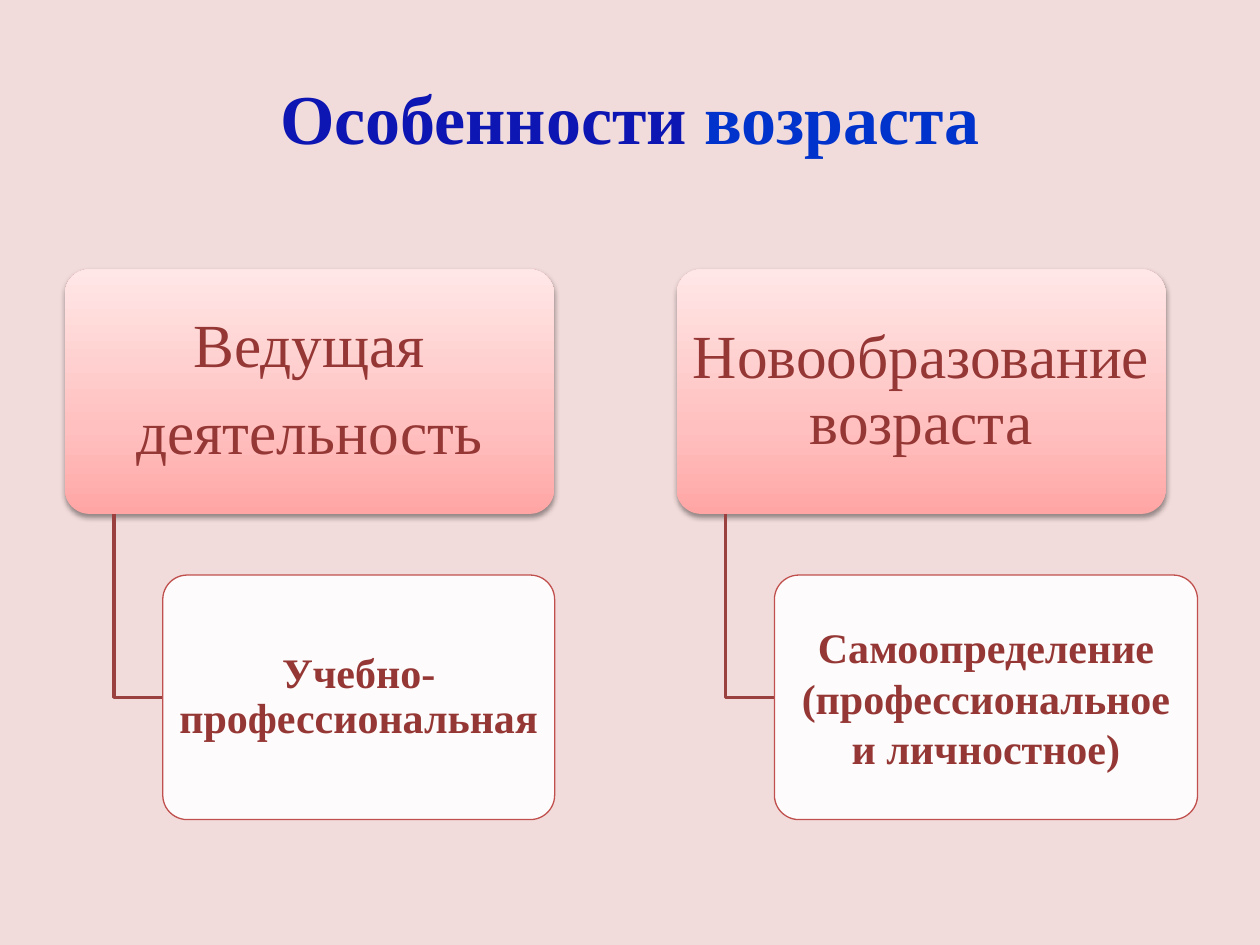
import pptx
import pptx.dml.color
import pptx.enum.shapes
import pptx.enum.text
import pptx.oxml
import pptx.oxml.ns
import pptx.util
from pptx.util import Cm

NAMESPACE = pptx.oxml.ns.nsdecls("a")
HEAD_TOP, HEAD_WIDTH, BOX_HEIGHT = 5.43, 9.86, 4.93
CHILD_TOP = HEAD_TOP + 1.25 * BOX_HEIGHT
COLUMNS = [
    dict(left=1.31, head=["Ведущая", "деятельность"],
         child="Учебно-профессиональная", child_width=7.9, child_spacing=0.9),
    dict(left=13.64, head=["Новообразование возраста"],
         child="Самоопределение (профессиональное и личностное)",
         child_width=8.53, child_spacing=1.0),
]


def color(value):
    return pptx.dml.color.RGBColor.from_string(value)


def write_text(shape, paragraphs, size, bold=False, line_spacing=1.0,
               space_after=0, inset=0.25):
    """Fill the shape with paragraphs, each a list of (text, colour) runs."""
    frame = shape.text_frame
    frame.word_wrap = True
    frame.vertical_anchor = pptx.enum.text.MSO_ANCHOR.MIDDLE
    frame.margin_left = frame.margin_right = Cm(inset)
    for index, runs in enumerate(paragraphs):
        paragraph = frame.add_paragraph() if index else frame.paragraphs[0]
        paragraph.alignment = pptx.enum.text.PP_ALIGN.CENTER
        paragraph.line_spacing = line_spacing
        paragraph.space_after = pptx.util.Pt(space_after)
        for text, text_color in runs:
            run = paragraph.add_run()
            run.text = text
            run.font.name = "Times New Roman"
            run.font.size = pptx.util.Pt(size)
            run.font.bold = bold
            run.font.color.rgb = color(text_color)


class SlideBuilder:
    text_color = "953735"
    border_color = "C0504D"
    elbow_color = "9A403E"
    gradient = [(0, "FFA6A5"), (35, "FFC0BF"), (100, "FFE7E7")]

    def __init__(self, slide, background):
        self.slide = slide
        slide.background.fill.solid()
        slide.background.fill.fore_color.rgb = color(background)

    def title(self, runs, left, top, width, height):
        shape = self.slide.shapes.add_textbox(Cm(left), Cm(top), Cm(width), Cm(height))
        write_text(shape, [runs], size=40, bold=True)

    def rounded_box(self, left, top, width):
        shape = self.slide.shapes.add_shape(
            pptx.enum.shapes.MSO_SHAPE.ROUNDED_RECTANGLE,
            Cm(left), Cm(top), Cm(width), Cm(BOX_HEIGHT))
        shape.adjustments[0] = 0.1
        shape.shadow.inherit = False
        return shape

    def head(self, lines, left):
        """Add a gradient box with a soft shadow below it."""
        shape = self.rounded_box(left, HEAD_TOP, HEAD_WIDTH)
        shape.line.fill.background()
        shape.fill.gradient()
        shape.fill.gradient_angle = 90
        properties = shape._element.spPr
        stops = properties.find(".//" + pptx.oxml.ns.qn("a:gsLst"))
        for stop in list(stops):
            stops.remove(stop)
        for position, value in self.gradient:
            stops.append(pptx.oxml.parse_xml(
                f'<a:gs {NAMESPACE} pos="{position * 1000}"><a:srgbClr val="{value}"/></a:gs>'))
        properties.find(pptx.oxml.ns.qn("a:effectLst")).append(pptx.oxml.parse_xml(
            f'<a:outerShdw {NAMESPACE} blurRad="{pptx.util.Pt(3.1)}" '
            f'dist="{pptx.util.Pt(1.6)}" dir="5400000" rotWithShape="0">'
            '<a:srgbClr val="000000"><a:alpha val="38000"/></a:srgbClr></a:outerShdw>'))
        write_text(shape, [[(line, self.text_color)] for line in lines],
                   size=35, line_spacing=0.9, space_after=12, inset=0.16)

    def elbow(self, left, top, right, bottom):
        builder = self.slide.shapes.build_freeform(Cm(left), Cm(top))
        builder.add_line_segments(
            [(Cm(left), Cm(bottom)), (Cm(right), Cm(bottom))], close=False)
        shape = builder.convert_to_shape()
        shape.shadow.inherit = False
        shape.fill.background()
        shape.line.color.rgb = color(self.elbow_color)
        shape.line.width = pptx.util.Pt(2)

    def child(self, text, left, width, line_spacing):
        """Add a slightly transparent white box with a thin border."""
        shape = self.rounded_box(left, CHILD_TOP, width)
        shape.fill.solid()
        shape.fill.fore_color.rgb = color("FFFFFF")
        fill_color = shape._element.spPr.find(
            pptx.oxml.ns.qn("a:solidFill") + "/" + pptx.oxml.ns.qn("a:srgbClr"))
        fill_color.append(pptx.oxml.parse_xml(f'<a:alpha {NAMESPACE} val="90000"/>'))
        shape.line.color.rgb = color(self.border_color)
        shape.line.width = pptx.util.Pt(0.75)
        write_text(shape, [[(text, self.text_color)]], size=24, bold=True,
                   line_spacing=line_spacing, inset=0.12)


def main():
    presentation = pptx.Presentation()
    presentation.slide_width, presentation.slide_height = Cm(25.4), Cm(19.05)
    slide = presentation.slides.add_slide(presentation.slide_layouts[6])
    builder = SlideBuilder(slide, background="F2DCDB")
    builder.title([("Особенности", "0D15B3"), (" возраста", "0033CC")],
                  left=1.27, top=0.76, width=22.86, height=3.18)
    for column in COLUMNS:
        left = column["left"]
        child_left = left + HEAD_WIDTH / 5
        builder.head(column["head"], left)
        builder.elbow(left + HEAD_WIDTH / 10, HEAD_TOP + BOX_HEIGHT,
                      child_left, CHILD_TOP + BOX_HEIGHT / 2)
        builder.child(column["child"], child_left, column["child_width"],
                      column["child_spacing"])
    presentation.save("out.pptx")


if __name__ == "__main__":
    main()
